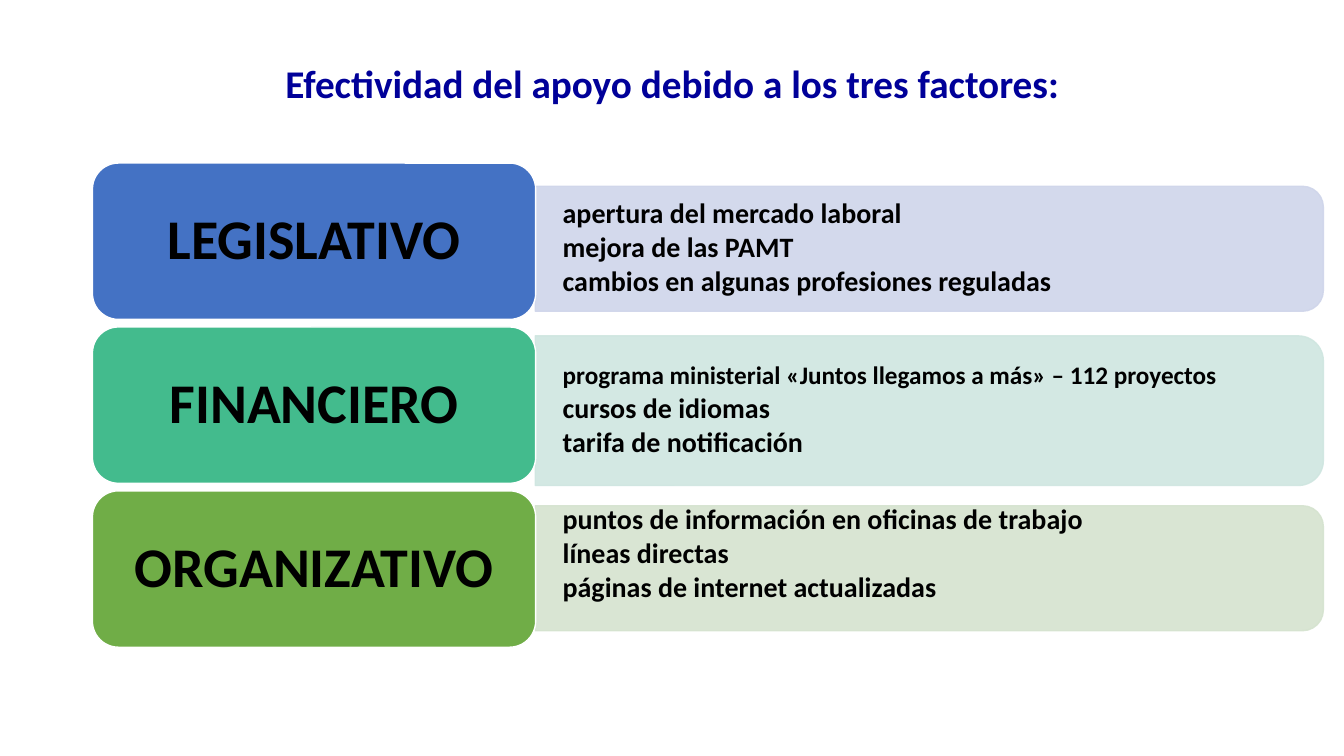
from lxml import etree
from pptx import Presentation
from pptx.dml.color import RGBColor
from pptx.enum.shapes import MSO_SHAPE
from pptx.enum.text import MSO_ANCHOR, PP_ALIGN
from pptx.oxml.ns import qn
from pptx.util import Cm, Pt

ROUND_RECT = MSO_SHAPE.ROUNDED_RECTANGLE
ROUND_TOP = MSO_SHAPE.ROUND_2_SAME_RECTANGLE
LEFT, CENTER = PP_ALIGN.LEFT, PP_ALIGN.CENTER
MIDDLE = MSO_ANCHOR.MIDDLE

LABEL_LEFT, LABEL_TOP, LABEL_W, LABEL_H, LABEL_PITCH = 2.33, 4.11, 11.17, 3.94, 4.13
PANEL_LEFT, PANEL_W = 13.49, 19.86

FACTORS = [
    ("LEGISLATIVO", "4472C4", "CFD5EA", 6.27, 3.15, 0.36,
     [("apertura del mercado laboral", 20), ("mejora de las PAMT", 20),
      ("cambios en algunas profesiones reguladas", 20)]),
    ("FINANCIERO", "43BB8D", "CFE6E0", 10.35, 3.77, 0.36,
     [("programa ministerial «Juntos llegamos a más» – 112 proyectos", 18),
      ("cursos de idiomas", 20), ("tarifa de notificación", 20)]),
    ("ORGANIZATIVO", "70AD47", "D5E3CF", 14.32, 3.15, 1.04,
     [("puntos de información en oficinas de trabajo", 20), ("líneas directas", 20),
      ("páginas de internet actualizadas", 20)]),
]


def rgb(value):
    return RGBColor.from_string(value)


class FactorSlide:
    """Draws the elements of the slide in one shared style."""

    font = "Calibri"

    def __init__(self, slide):
        self.s = slide

    def set_text(self, sp, lines, color, align, insets, after=0):
        tf = sp.text_frame
        tf.word_wrap = True
        tf.vertical_anchor = MIDDLE
        tf.margin_left = tf.margin_right = Cm(insets[0])
        tf.margin_top, tf.margin_bottom = Cm(insets[1]), Cm(insets[2])
        tf.text = "\n".join(text for text, size in lines)
        for p, (text, size) in zip(tf.paragraphs, lines):
            p.alignment = align
            p.line_spacing = 0.9
            p.space_after = Pt(after)
            for r in p.runs:
                r.font.name = self.font
                r.font.size = Pt(size)
                r.font.bold = True
                r.font.color.rgb = rgb(color)

    def shape(self, kind, left, top, width, height, fill, line):
        sp = self.s.shapes.add_shape(kind, Cm(left), Cm(top), Cm(width), Cm(height))
        sp.shadow.inherit = False
        sp.fill.solid()
        sp.fill.fore_color.rgb = rgb(fill)
        sp.line.color.rgb = rgb(line)
        sp.line.width = Pt(1)
        return sp

    def text(self, left, top, width, height, lines, color, align, insets, after=0):
        sp = self.s.shapes.add_textbox(Cm(left), Cm(top), Cm(width), Cm(height))
        self.set_text(sp, lines, color, align, insets, after)

    def panel(self, middle, height, color):
        center = PANEL_LEFT + PANEL_W / 2
        sp = self.shape(ROUND_TOP, center - height / 2, middle - PANEL_W / 2,
                        height, PANEL_W, color, color)
        sp.rotation = 90
        for clr in sp._element.spPr.iter(qn("a:srgbClr")):
            etree.SubElement(clr, qn("a:alpha")).set("val", "90000")

    def label(self, top, name, color):
        sp = self.shape(ROUND_RECT, LABEL_LEFT, top, LABEL_W, LABEL_H, color, "FFFFFF")
        self.set_text(sp, [(name, 40)], "000000", CENTER, (0.62, 0.4, 0.4))


def main():
    prs = Presentation()
    prs.slide_width, prs.slide_height = Cm(33.87), Cm(19.05)
    page = FactorSlide(prs.slides.add_slide(prs.slide_layouts[6]))
    page.text(2.33, 0.69, 29.21, 2.92,
              [("Efectividad del apoyo debido a los tres factores:", 28)],
              "000099", CENTER, (0.25, 0.13, 0.13))
    for i, (name, color, tint, middle, height, bottom, lines) in enumerate(FACTORS):
        page.panel(middle, height, tint)
        text_h = 0.9 * height
        page.text(PANEL_LEFT, middle - text_h / 2, 19.7, text_h, lines,
                  "000000", LEFT, (0.69, 0.36, bottom), 2.7)
        page.label(LABEL_TOP + i * LABEL_PITCH, name, color)
    prs.save("out.pptx")


if __name__ == "__main__":
    main()
